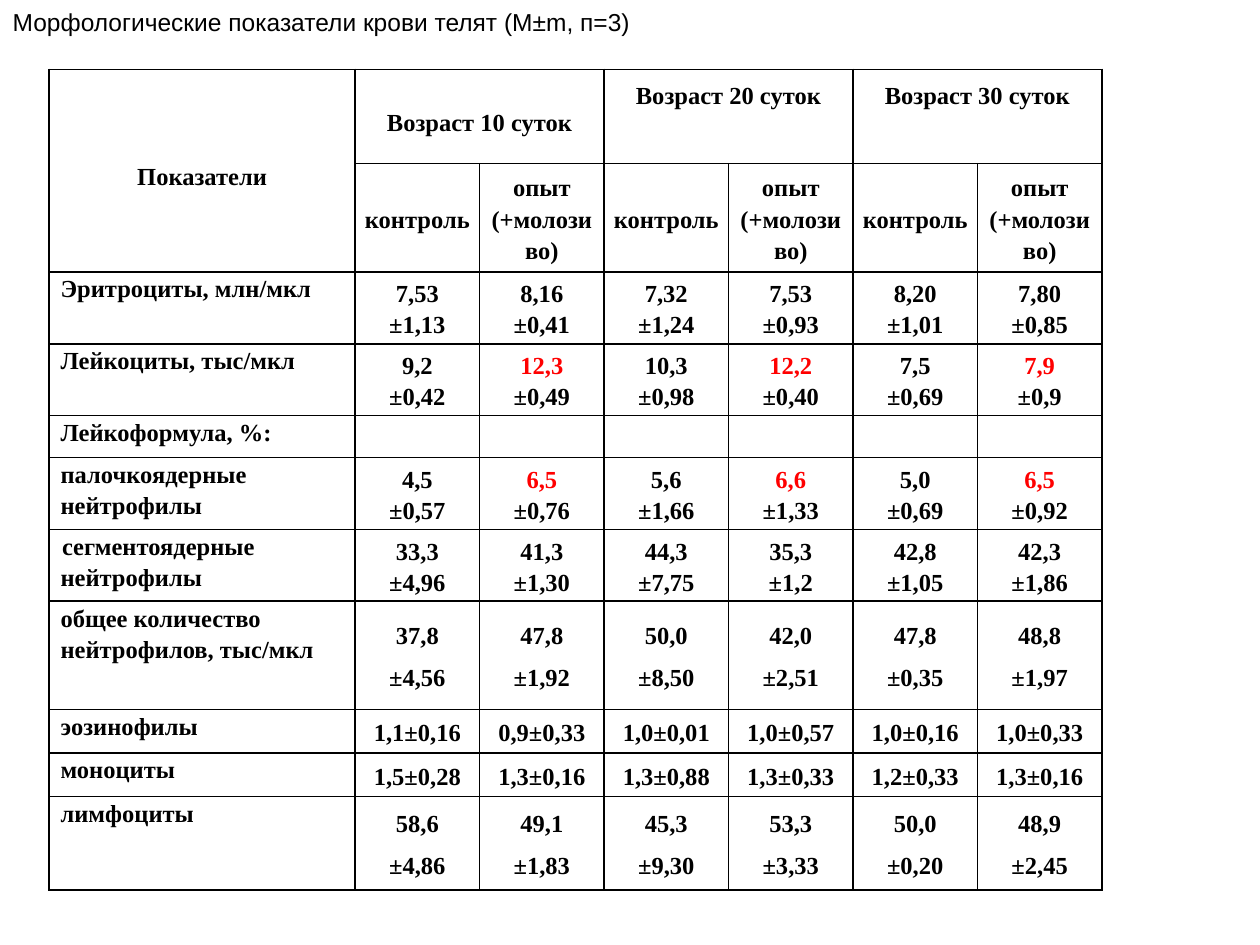
import pptx
import pptx.util
import pptx.dml.color
import pptx.enum.text
import pptx.oxml
import pptx.oxml.ns
from pptx.util import Cm

BLACK = pptx.dml.color.RGBColor(0, 0, 0)
RED = pptx.dml.color.RGBColor(255, 0, 0)
WHITE = pptx.dml.color.RGBColor(255, 255, 255)
ALIGN = pptx.enum.text.PP_ALIGN
ANCHOR = pptx.enum.text.MSO_ANCHOR


def write_text(frame, text, font="Times New Roman", bold=True, align=ALIGN.CENTER,
               first_color=BLACK, line_spacing=1.15, before=0, after=0,
               left_indent=0, first_indent=0):
    """Write each line of text as a paragraph; the first may have its own colour."""
    for index, line in enumerate(text.split("\n")):
        paragraph = frame.paragraphs[0] if index == 0 else frame.add_paragraph()
        paragraph.alignment = align
        paragraph.line_spacing = line_spacing
        paragraph.space_before = pptx.util.Pt(before)
        paragraph.space_after = pptx.util.Pt(after)
        properties = paragraph._p.get_or_add_pPr()
        properties.set("marL", str(int(left_indent)))
        properties.set("indent", str(int(first_indent)))
        run = paragraph.add_run()
        run.text = line
        run.font.name = font
        run.font.size = pptx.util.Pt(14)
        run.font.bold = bold
        run.font.color.rgb = first_color if index == 0 else BLACK


def add_borders(cell):
    properties = cell._tc.get_or_add_tcPr()
    for index, side in enumerate(("lnL", "lnR", "lnT", "lnB")):
        properties.insert(index, pptx.oxml.parse_xml(
            f'<a:{side} {pptx.oxml.ns.nsdecls("a")} w="12700"><a:solidFill>'
            f'<a:srgbClr val="{BLACK}"/></a:solidFill></a:{side}>'))


presentation = pptx.Presentation()
presentation.slide_width, presentation.slide_height = Cm(25.4), Cm(19.05)
slide = presentation.slides.add_slide(presentation.slide_layouts[5])

# Title
title = slide.shapes.title
title.left, title.top, title.width, title.height = Cm(0), Cm(0), Cm(13.03), Cm(0.86)
title.text_frame.word_wrap = False
title.text_frame.vertical_anchor = ANCHOR.MIDDLE
write_text(title.text_frame, "Морфологические показатели крови телят (M±m, п=3)",
           font="Arial", bold=False, align=ALIGN.LEFT, line_spacing=1.0)

# Table content: label, values, paragraph spacing, whether trial values are red
ROWS = [
    ("Эритроциты, млн/мкл", "7,53 ±1,13|8,16 ±0,41|7,32 ±1,24|7,53 ±0,93|8,20 ±1,01|7,80 ±0,85", {}, False),
    ("Лейкоциты, тыс/мкл", "9,2 ±0,42|12,3 ±0,49|10,3 ±0,98|12,2 ±0,40|7,5 ±0,69|7,9 ±0,9", {}, True),
    ("Лейкоформула, %:", "|||||", {}, False),
    ("палочкоядерные нейтрофилы", "4,5 ±0,57|6,5 ±0,76|5,6 ±1,66|6,6 ±1,33|5,0 ±0,69|6,5 ±0,92", {}, True),
    ("сегментоядерные нейтрофилы", "33,3 ±4,96|41,3 ±1,30|44,3 ±7,75|35,3 ±1,2|42,8 ±1,05|42,3 ±1,86", {}, False),
    ("общее количество нейтрофилов, тыс/мкл",
     "37,8 ±4,56|47,8 ±1,92|50,0 ±8,50|42,0 ±2,51|47,8 ±0,35|48,8 ±1,97", {"before": 6}, False),
    ("эозинофилы", "1,1±0,16|0,9±0,33|1,0±0,01|1,0±0,57|1,0±0,16|1,0±0,33", {"after": 12}, False),
    ("моноциты", "1,5±0,28|1,3±0,16|1,3±0,88|1,3±0,33|1,2±0,33|1,3±0,16", {}, False),
    ("лимфоциты", "58,6 ±4,86|49,1 ±1,83|45,3 ±9,30|53,3 ±3,33|50,0 ±0,20|48,9 ±2,45", {"before": 6}, False),
]
COLUMN_WIDTHS = [6.17] + [2.51] * 6
ROW_HEIGHTS = [1.9, 2.18, 1.45, 1.45, 0.84, 1.45, 1.45, 2.18, 0.88, 0.88, 1.88]

# Table grid
table = slide.shapes.add_table(
    len(ROW_HEIGHTS), len(COLUMN_WIDTHS), Cm(0.99), Cm(1.4),
    Cm(sum(COLUMN_WIDTHS)), Cm(sum(ROW_HEIGHTS))).table
table.first_row = table.horz_banding = False
for column, width in zip(table.columns, COLUMN_WIDTHS):
    column.width = Cm(width)
for row_index, (row, height) in enumerate(zip(table.rows, ROW_HEIGHTS)):
    row.height = Cm(height)
    for column_index, cell in enumerate(row.cells):
        is_header = row_index < 2
        cell.margin_left = cell.margin_right = Cm(0.15 if is_header else 0.05)
        cell.margin_top = cell.margin_bottom = 0
        cell.vertical_anchor = ANCHOR.MIDDLE
        if is_header:
            cell.fill.background()
        else:
            cell.fill.solid()
            cell.fill.fore_color.rgb = WHITE
        add_borders(cell)

# Header rows
table.cell(0, 0).merge(table.cell(1, 0))
write_text(table.cell(0, 0).text_frame, "Показатели", line_spacing=1.5)
for group, age in enumerate((10, 20, 30)):
    column = 1 + 2 * group
    age_cell = table.cell(0, column)
    age_cell.merge(table.cell(0, column + 1))
    age_cell.vertical_anchor = ANCHOR.MIDDLE if group == 0 else ANCHOR.TOP
    write_text(age_cell.text_frame, f"Возраст {age} суток", line_spacing=1.5)
    write_text(table.cell(1, column).text_frame, "контроль")
    write_text(table.cell(1, column + 1).text_frame, "опыт (+молозиво)")

# Data rows
for row_index, (label, values, spacing, red_trial) in enumerate(ROWS, start=2):
    label_cell = table.cell(row_index, 0)
    label_cell.vertical_anchor = ANCHOR.TOP
    label_spacing = {} if label.startswith("общее") else spacing
    write_text(label_cell.text_frame, label, align=ALIGN.LEFT, left_indent=Cm(0.18),
               first_indent=Cm(0.03 if label.startswith("сегмент") else 0), **label_spacing)
    for column, value in enumerate(values.split("|"), start=1):
        if value:
            write_text(table.cell(row_index, column).text_frame, value.replace(" ", "\n"),
                       first_color=RED if red_trial and column % 2 == 0 else BLACK, **spacing)

presentation.save("out.pptx")
